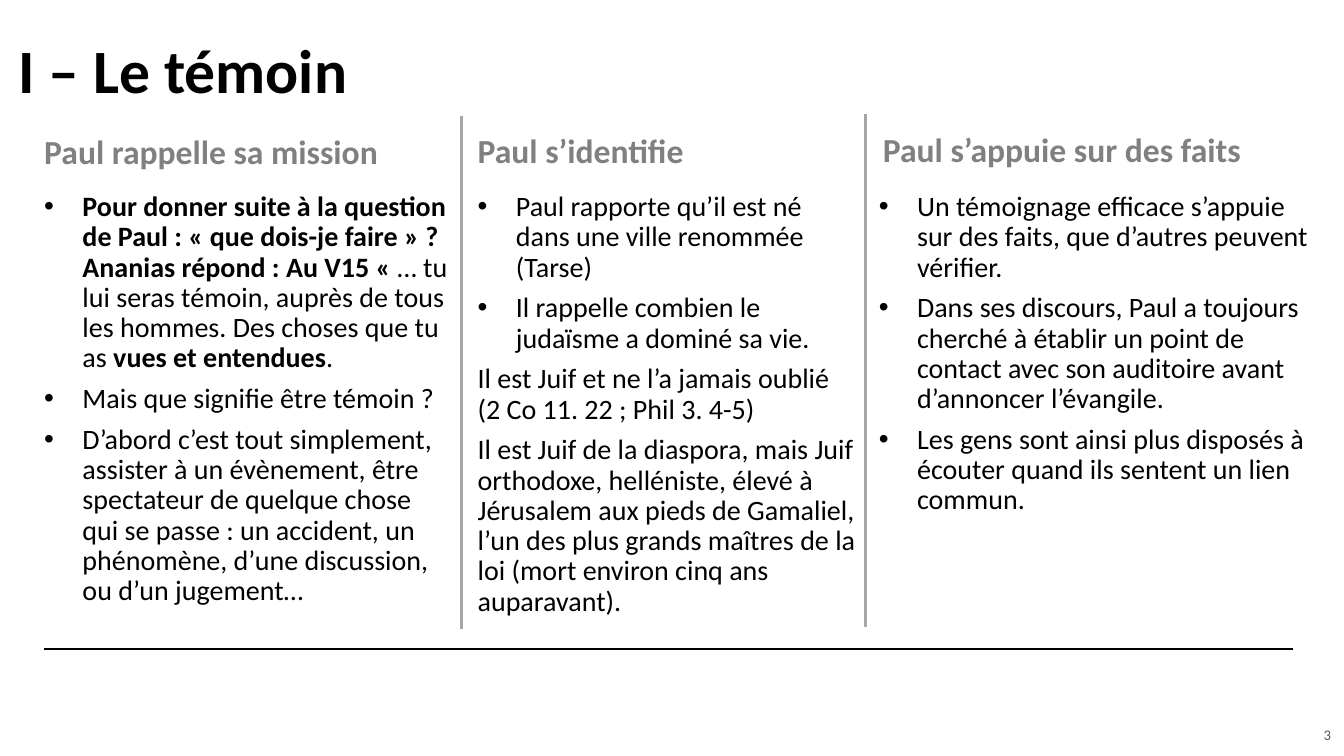
from lxml import etree
from pptx import Presentation
from pptx import util as u
from pptx.dml.color import RGBColor
from pptx.enum import shapes, text
from pptx.oxml import ns

HUES = {"ink": "000000", "head": "808080", "rule": "A6A6A6", "page": "595959"}
TOP, LOW = text.MSO_ANCHOR.TOP, text.MSO_ANCHOR.BOTTOM
MID = text.MSO_ANCHOR.MIDDLE
BODY_TOP = 22.32


class Deck:
    font = "Calibri"
    cols, rows = 160, 90

    def __init__(self):
        self.prs = Presentation()
        self.prs.slide_width = u.Inches(13.33)
        self.prs.slide_height = u.Inches(7.5)
        self.slide = self.prs.slides.add_slide(self.prs.slide_layouts[6])

    def x(self, col):
        return round(self.prs.slide_width * col / self.cols)

    def y(self, row):
        return round(self.prs.slide_height * row / self.rows)

    def line(self, start, end, hue, width):
        line = self.slide.shapes.add_connector(
            shapes.MSO_CONNECTOR.STRAIGHT,
            self.x(start[0]), self.y(start[1]), self.x(end[0]), self.y(end[1]))
        line.line.color.rgb = RGBColor.from_string(HUES[hue])
        line.line.width = u.Pt(width)
        props = line._element.find(ns.qn("p:spPr"))
        etree.SubElement(props, ns.qn("a:effectLst"))

    def frame(self, left, top, width, height, anchor=TOP):
        box = self.slide.shapes.add_textbox(
            self.x(left), self.y(top), self.x(width), self.y(height))
        frame = box.text_frame
        frame.word_wrap = True
        frame.vertical_anchor = anchor
        return frame

    def para(self, frame, runs, size, hue="ink", before=0, bullet=False):
        para = frame.paragraphs[0]
        if para.runs:
            para = frame.add_paragraph()
        para.line_spacing = 0.9
        para.space_before = u.Pt(before)
        if bullet:
            props = para._p.get_or_add_pPr()
            props.set("marL", str(u.Inches(0.38)))
            props.set("indent", str(-u.Inches(0.38)))
            etree.SubElement(props, ns.qn("a:buFont")).set("typeface", "Arial")
            etree.SubElement(props, ns.qn("a:buChar")).set("char", "•")
        for words, bold in runs:
            run = para.add_run()
            run.text = words
            run.font.name = self.font
            run.font.size = u.Pt(size)
            run.font.bold = bold
            run.font.color.rgb = RGBColor.from_string(HUES[hue])
        return para

    def head(self, place, words):
        self.para(self.frame(*place, LOW), [(words, True)], 24, "head", 7.5)

    def body(self, place, paras):
        frame = self.frame(*place)
        for bullet, runs in paras:
            self.para(frame, runs, 20, before=7.5, bullet=bullet)


def main():
    deck = Deck()
    deck.line((5.28, 77.28), (153.96, 77.28), "ink", 1)
    deck.para(deck.frame(1, 4.2, 100.6, 9.48), [("I – Le témoin", True)], 44)
    page = deck.para(deck.frame(154.72, 85.2, 4.92, 4.8, MID),
                     [("3", False)], 10.5, "page")
    page.alignment = text.PP_ALIGN.RIGHT

    parts = [
        ("Paul rappelle sa mission", (4.08, 13.32, 50.88, 7.68),
         (4.08, BODY_TOP, 50.88, 51.36), [
            (True, [
                ("Pour donner suite à la question de Paul : « que dois-je faire » ? "
                 "Ananias répond : Au V15 « ", True),
                ("… tu lui seras témoin, auprès de tous les hommes. "
                 "Des choses que tu as ", False),
                ("vues et entendues", True),
                (".", False)]),
            (True, [("Mais que signifie être témoin ?", False)]),
            (True, [("D’abord c’est tout simplement, assister à un évènement, "
                     "être spectateur de quelque chose qui se passe : un accident, "
                     "un phénomène, d’une discussion, ou d’un jugement…", False)])]),
        ("Paul s’identifie", (55.68, 16.32, 47.4, 4.56),
         (55.68, BODY_TOP, 47.4, 52.32), [
            (True, [("Paul rapporte qu’il est né dans une ville renommée (Tarse)",
                     False)]),
            (True, [("Il rappelle combien le judaïsme a dominé sa vie.", False)]),
            (False, [("Il est Juif et ne l’a jamais oublié "
                      "(2 Co 11. 22 ; Phil 3. 4-5)", False)]),
            (False, [("Il est Juif de la diaspora, mais Juif orthodoxe, helléniste, "
                      "élevé à Jérusalem aux pieds de Gamaliel, l’un des plus grands "
                      "maîtres de la loi (mort environ cinq ans auparavant).",
                      False)])]),
        ("Paul s’appuie sur des faits", (103.92, 12.12, 50.88, 8.64),
         (103.44, BODY_TOP, 54.24, 49.32), [
            (True, [("Un témoignage efficace s’appuie sur des faits, "
                     "que d’autres peuvent vérifier.", False)]),
            (True, [("Dans ses discours, Paul a toujours cherché à établir un point "
                     "de contact avec son auditoire avant d’annoncer l’évangile.",
                     False)]),
            (True, [("Les gens sont ainsi plus disposés à écouter "
                     "quand ils sentent un lien commun.", False)])]),
    ]
    for title, head, body, paras in parts:
        deck.head(head, title)
        deck.body(body, paras)

    for col, low in ((54.96, 74.88), (103.08, 74.64)):
        deck.line((col, low), (col, low - 61.08), "rule", 2.25)

    deck.prs.save("out.pptx")


if __name__ == "__main__":
    main()
